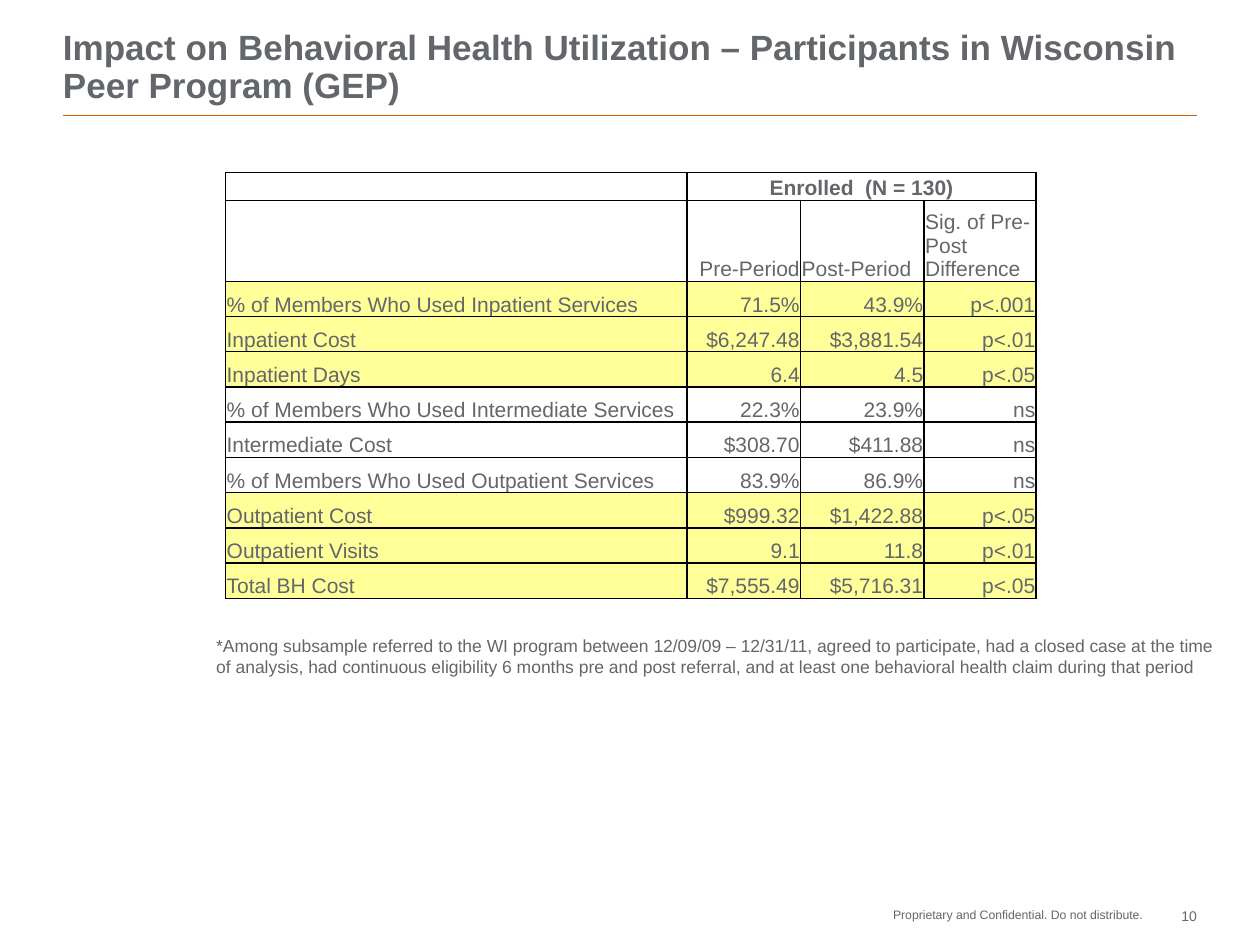
from lxml.etree import SubElement
from pptx import Presentation
from pptx.dml.color import RGBColor
from pptx.enum.shapes import MSO_CONNECTOR
from pptx.enum.text import MSO_ANCHOR, MSO_AUTO_SIZE, PP_ALIGN
from pptx.oxml.ns import qn
from pptx.util import Cm, Pt

GREY = RGBColor(0x63, 0x66, 0x6A)
ORANGE = RGBColor(0xD4, 0x5D, 0x00)
YELLOW = RGBColor(0xFF, 0xFF, 0x99)
BORDER = "000000"
FONT = "Arial"

TITLE = ("Impact on Behavioral Health Utilization – Participants in Wisconsin "
         "Peer Program (GEP)")
NOTE = ("*Among subsample referred to the WI program between 12/09/09 – 12/31/11, "
        "agreed to participate, had a closed case at the time of analysis, had "
        "continuous eligibility 6 months pre and post referral, and at least one "
        "behavioral health claim during that period")
CONFIDENTIAL = "Proprietary and Confidential. Do not distribute."
PAGE_NUMBER = "10"

GROUP_ROW = ("", "Enrolled  (N = 130)", "", "")
HEADER_ROW = ("", "Pre-Period", "Post-Period", "Sig. of Pre-Post Difference")
MEASURES = [
    ("% of Members Who Used Inpatient Services", "71.5%", "43.9%", "p<.001"),
    ("Inpatient Cost", "$6,247.48", "$3,881.54", "p<.01"),
    ("Inpatient Days", "6.4", "4.5", "p<.05"),
    ("% of Members Who Used Intermediate Services", "22.3%", "23.9%", "ns"),
    ("Intermediate Cost", "$308.70", "$411.88", "ns"),
    ("% of Members Who Used Outpatient Services", "83.9%", "86.9%", "ns"),
    ("Outpatient Cost", "$999.32", "$1,422.88", "p<.05"),
    ("Outpatient Visits", "9.1", "11.8", "p<.01"),
    ("Total BH Cost", "$7,555.49", "$5,716.31", "p<.05"),
]
ROWS = [GROUP_ROW, HEADER_ROW, *MEASURES]
COLUMN_WIDTHS = (9.3, 2.29, 2.49, 2.26)
ROW_HEIGHTS = (0.56, 1.63) + (0.71,) * len(MEASURES)

LEFT, CENTER, RIGHT = PP_ALIGN.LEFT, PP_ALIGN.CENTER, PP_ALIGN.RIGHT
GROUP_ALIGN = (LEFT, CENTER, LEFT, LEFT)
HEADER_ALIGN = (LEFT, RIGHT, LEFT, LEFT)
MEASURE_ALIGN = (LEFT, RIGHT, RIGHT, RIGHT)


def style(paragraph, size, align=LEFT, bold=False):
    paragraph.alignment = align
    font = paragraph.font
    font.name, font.size, font.bold = FONT, Pt(size), bold
    font.color.rgb = GREY


def add_text(slide, text, box, size, align=LEFT, bold=False, inset=0, wrap=True):
    """Add a one-paragraph text box; box is left, top, width, height in cm."""
    frame = slide.shapes.add_textbox(*map(Cm, box)).text_frame
    frame.word_wrap = wrap
    frame.margin_left = frame.margin_right = Cm(inset)
    frame.margin_top = frame.margin_bottom = Cm(inset / 2)
    paragraph = frame.paragraphs[0]
    paragraph.text = text
    style(paragraph, size, align, bold)
    return frame


def add_borders(cell):
    properties = cell._tc.get_or_add_tcPr()
    for side in ("lnL", "lnR", "lnT", "lnB"):
        line = SubElement(properties, qn(f"a:{side}"), w=str(Pt(1)))
        fill = SubElement(line, qn("a:solidFill"))
        SubElement(fill, qn("a:srgbClr"), val=BORDER)


def fill_cell(cell, text, align, bold, highlighted):
    cell.margin_left = cell.margin_right = cell.margin_top = Cm(0.02)
    cell.margin_bottom = 0
    cell.vertical_anchor = MSO_ANCHOR.BOTTOM
    paragraph = cell.text_frame.paragraphs[0]
    if text:
        paragraph.text = text
    else:  # keeps an empty cell from stretching its row
        SubElement(paragraph._p, qn("a:endParaRPr"), sz="1200")
    style(paragraph, 12, align, bold)
    add_borders(cell)
    if highlighted:
        cell.fill.solid()
        cell.fill.fore_color.rgb = YELLOW
    else:
        cell.fill.background()


def add_results_table(slide):
    table = slide.shapes.add_table(
        len(ROWS), len(COLUMN_WIDTHS), Cm(4.55), Cm(3.48),
        Cm(sum(COLUMN_WIDTHS)), Cm(sum(ROW_HEIGHTS))).table
    table.first_row = table.horz_banding = False
    for column, width in zip(table.columns, COLUMN_WIDTHS):
        column.width = Cm(width)
    for row, height in zip(table.rows, ROW_HEIGHTS):
        row.height = Cm(height)
    table.cell(0, 1).merge(table.cell(0, 3))

    alignments = [GROUP_ALIGN, HEADER_ALIGN] + [MEASURE_ALIGN] * len(MEASURES)
    for r, (texts, aligns) in enumerate(zip(ROWS, alignments)):
        significant = texts[-1].startswith("p<")
        for c, (text, align) in enumerate(zip(texts, aligns)):
            fill_cell(table.cell(r, c), text, align, r == 0, significant)


def add_title_rule(slide):
    rule = slide.shapes.add_connector(
        MSO_CONNECTOR.STRAIGHT, Cm(1.27), Cm(2.33), Cm(24.13), Cm(2.33))
    rule.line.color.rgb = ORANGE
    rule.line.width = Pt(1)
    SubElement(rule._element.spPr, qn("a:effectLst"))


def main():
    prs = Presentation()
    prs.slide_width, prs.slide_height = Cm(25.4), Cm(19.05)
    slide = prs.slides.add_slide(prs.slide_layouts[6])

    add_title_rule(slide)
    add_text(slide, CONFIDENTIAL, (17.98, 18.29, 5.06, 0.3), 7, RIGHT, wrap=False)
    add_text(slide, PAGE_NUMBER, (23.29, 18.29, 0.84, 0.43), 8, RIGHT)
    title = add_text(slide, TITLE, (1.27, 0.43, 23.22, 1.7), 20, bold=True)
    title.vertical_anchor = MSO_ANCHOR.BOTTOM
    title.paragraphs[0].line_spacing = 0.9
    note = add_text(slide, NOTE, (4.11, 12.67, 20.75, 1.12), 10, inset=0.25)
    note.auto_size = MSO_AUTO_SIZE.SHAPE_TO_FIT_TEXT
    add_results_table(slide)

    prs.save("out.pptx")


if __name__ == "__main__":
    main()
